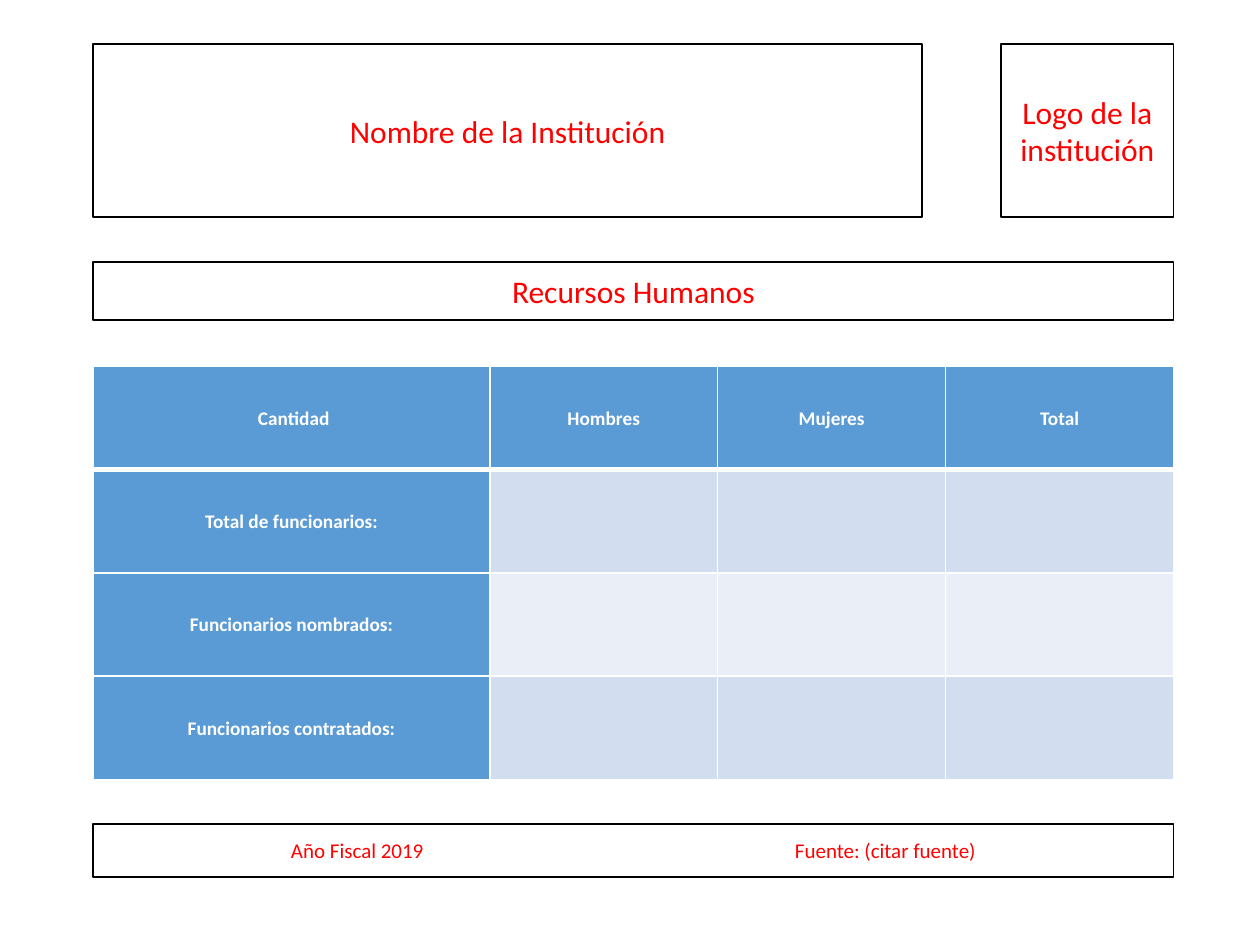
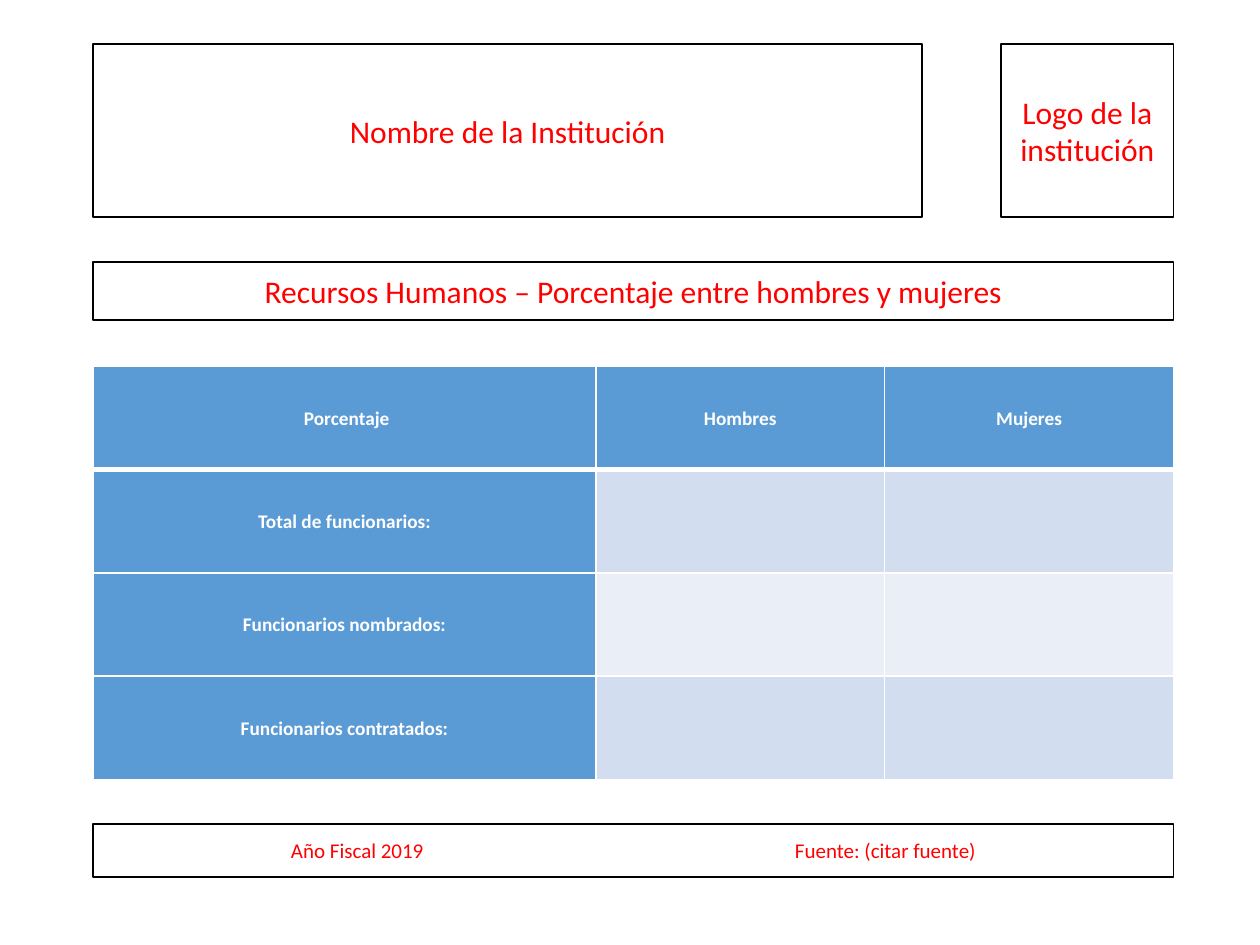
from lxml import etree
from pptx import Presentation
from pptx.dml.color import RGBColor
from pptx.enum.shapes import MSO_SHAPE
from pptx.enum.text import MSO_ANCHOR, PP_ALIGN
from pptx.oxml.ns import qn
from pptx.util import Cm, Pt

RECTANGLE = MSO_SHAPE.RECTANGLE
MIDDLE = MSO_ANCHOR.MIDDLE
CENTER = PP_ALIGN.CENTER

COLORS = {
    "frame": "000000",
    "prompt": "FF0000",
    "heading": "5B9BD5",
    "heading_text": "FFFFFF",
    "grid": "FFFFFF",
    "odd_row": "D2DEEF",
    "even_row": "EAEFF7",
}
FONT = "Calibri"

LEFT, WIDTH = 1.88, 21.78
HEADER_TOP, HEADER_HEIGHT = 0.89, 3.48
NAME_WIDTH = 16.71
TITLE_TOP, TITLE_HEIGHT = 5.28, 1.17
TABLE_TOP, ROW_HEIGHT = 7.39, 2.08
LABEL_SHARE = 1.74  # label column, in widths of a value column
FOOTER_TOP, FOOTER_HEIGHT = 16.61, 1.07
SOURCE_TAB = 10.16

ROW_LABELS = [
    "Total de funcionarios:",
    "Funcionarios nombrados:",
    "Funcionarios contratados:",
]
REPORTS = [
    ("Recursos Humanos", [" Cantidad", "Hombres", "Mujeres", "Total"]),
    ("Recursos Humanos – Porcentaje entre hombres y mujeres",
     [" Porcentaje", "Hombres", "Mujeres"]),
]


def rgb(name):
    return RGBColor.from_string(COLORS[name])


class ReportDeck:
    def __init__(self):
        self.deck = Presentation()
        self.deck.slide_width, self.deck.slide_height = Cm(25.4), Cm(19.05)
        self.page = None

    def add_page(self):
        self.page = self.deck.slides.add_slide(self.deck.slide_layouts[6])

    def format_text(self, para, size, color, bold=False):
        para.alignment = CENTER
        for span in para.runs:
            span.font.name = FONT
            span.font.size = Pt(size)
            span.font.bold = bold
            span.font.color.rgb = rgb(color)

    def add_frame(self, text, left, top, width, height, size=18):
        """Outlined box with centred prompt text; returns its paragraph."""
        box = self.page.shapes.add_shape(
            RECTANGLE, Cm(left), Cm(top), Cm(width), Cm(height))
        box.shadow.inherit = False
        box.fill.background()
        box.line.color.rgb = rgb("frame")
        box.line.width = Pt(1)
        box.text_frame.word_wrap = True
        box.text_frame.vertical_anchor = MIDDLE
        para = box.text_frame.paragraphs[0]
        para.text = text
        self.format_text(para, size, "prompt")
        return para

    def add_header(self):
        logo_left = LEFT + WIDTH - HEADER_HEIGHT
        self.add_frame("Logo de la institución", logo_left, HEADER_TOP,
                       HEADER_HEIGHT, HEADER_HEIGHT)
        self.add_frame("Nombre de la Institución", LEFT, HEADER_TOP,
                       NAME_WIDTH, HEADER_HEIGHT)

    def add_title(self, text):
        self.add_frame(text, LEFT, TITLE_TOP, WIDTH, TITLE_HEIGHT)

    def add_footer(self):
        para = self.add_frame("Año Fiscal 2019\tFuente: (citar fuente)",
                              LEFT, FOOTER_TOP, WIDTH, FOOTER_HEIGHT, size=12)
        stops = etree.SubElement(para._p.get_or_add_pPr(), qn("a:tabLst"))
        etree.SubElement(stops, qn("a:tab"), pos=str(Cm(SOURCE_TAB)), algn="l")

    def add_borders(self, cell, top, bottom):
        properties = cell._tc.get_or_add_tcPr()
        for side, width in (("L", 1), ("R", 1), ("T", top), ("B", bottom)):
            line = etree.SubElement(properties, qn(f"a:ln{side}"), w=str(Pt(width)))
            fill = etree.SubElement(line, qn("a:solidFill"))
            etree.SubElement(fill, qn("a:srgbClr"), val=COLORS["grid"])

    def fill_cell(self, cell, fill, text):
        cell.fill.solid()
        cell.fill.fore_color.rgb = rgb(fill)
        cell.vertical_anchor = MIDDLE
        cell.margin_left = cell.margin_right = Cm(0.18)
        cell.margin_top = cell.margin_bottom = 0
        if text:
            para = cell.text_frame.paragraphs[0]
            para.text = text
            para.line_spacing = 1.07
            self.format_text(para, 11, "heading_text", bold=True)

    def add_staff_table(self, headings):
        row_count, column_count = len(ROW_LABELS) + 1, len(headings)
        table = self.page.shapes.add_table(
            row_count, column_count, Cm(LEFT), Cm(TABLE_TOP),
            Cm(WIDTH), Cm(ROW_HEIGHT * row_count)).table
        table.first_row = table.horz_banding = False
        value_width = WIDTH / (LABEL_SHARE + column_count - 1)
        for index, column in enumerate(table.columns):
            column.width = Cm(value_width * (1 if index else LABEL_SHARE))
        blanks = [""] * (column_count - 1)
        rows = [headings] + [[label] + blanks for label in ROW_LABELS]
        for row, texts in enumerate(rows):
            table.rows[row].height = Cm(ROW_HEIGHT)
            band = "odd_row" if row % 2 else "even_row"
            for column, text in enumerate(texts):
                cell = table.cell(row, column)
                self.add_borders(cell, top=3 if row == 1 else 1,
                                 bottom=3 if row == 0 else 1)
                is_heading = row == 0 or column == 0
                self.fill_cell(cell, "heading" if is_heading else band, text)


def main():
    report = ReportDeck()
    for title, headings in REPORTS:
        report.add_page()
        report.add_header()
        report.add_title(title)
        report.add_staff_table(headings)
        report.add_footer()
    report.deck.save("out.pptx")


if __name__ == "__main__":
    main()
